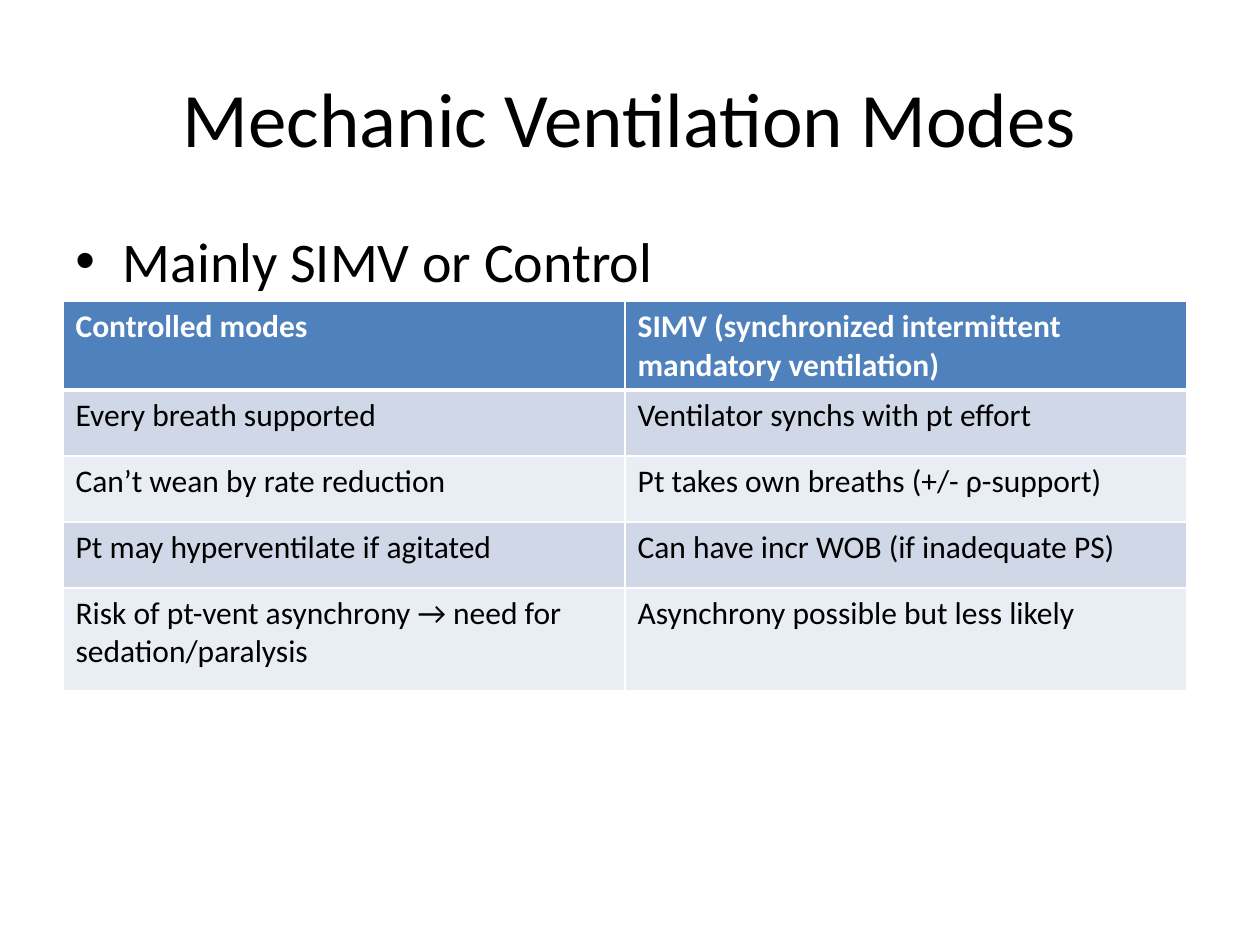
from lxml import etree
from pptx import Presentation
from pptx.dml.color import RGBColor
from pptx.enum import text
from pptx.oxml import ns
from pptx.util import Cm, Pt

TITLE = "Mechanic Ventilation Modes"
BULLET = "Mainly SIMV or Control"
MODES = [
    ("Controlled modes", "SIMV (synchronized intermittent mandatory ventilation)"),
    ("Every breath supported", "Ventilator synchs with pt effort"),
    ("Can’t wean by rate reduction", "Pt takes own breaths (+/- ρ-support)"),
    ("Pt may hyperventilate if agitated", "Can have incr WOB (if inadequate PS)"),
    ("Risk of pt-vent asynchrony → need for sedation/paralysis",
     "Asynchrony possible but less likely"),
]

FONT = "Calibri"
BLACK = RGBColor(0x00, 0x00, 0x00)
WHITE = RGBColor(0xFF, 0xFF, 0xFF)
HEADER_BLUE = RGBColor(0x4F, 0x81, 0xBD)
BANDS = [RGBColor(0xE9, 0xED, 0xF4), RGBColor(0xD0, 0xD8, 0xE8)]

LEFT = Cm(1.27)
TEXT_WIDTH = Cm(22.86)
COLUMN_WIDTH = Cm(11.33)
ROW_HEIGHT, LAST_ROW_HEIGHT = Cm(1.33), Cm(2.08)
BULLET_INDENT = Cm(0.95)


def add_run(paragraph, words, size, color=BLACK, bold=False):
    run = paragraph.add_run()
    run.text = words
    run.font.name = FONT
    run.font.size = Pt(size)
    run.font.bold = bold
    run.font.color.rgb = color


def add_text_box(slide, top, height, anchor):
    frame = slide.shapes.add_textbox(LEFT, top, TEXT_WIDTH, height).text_frame
    frame.word_wrap = True
    frame.vertical_anchor = anchor
    return frame.paragraphs[0]


def add_bullet(paragraph):
    properties = paragraph._p.get_or_add_pPr()
    properties.set("marL", str(BULLET_INDENT))
    properties.set("indent", str(-BULLET_INDENT))
    etree.SubElement(properties, ns.qn("a:buFont"), typeface="Arial")
    etree.SubElement(properties, ns.qn("a:buChar"), char="•")


def set_borders(cell, bottom_width):
    properties = cell._tc.get_or_add_tcPr()
    widths = {"a:lnL": 1, "a:lnR": 1, "a:lnT": 1, "a:lnB": bottom_width}
    for position, (tag, width) in enumerate(widths.items()):
        line = etree.Element(ns.qn(tag), w=str(Pt(width)))
        fill = etree.SubElement(line, ns.qn("a:solidFill"))
        etree.SubElement(fill, ns.qn("a:srgbClr"), val=str(WHITE))
        properties.insert(position, line)


def add_modes_table(slide):
    heights = [ROW_HEIGHT] * (len(MODES) - 1) + [LAST_ROW_HEIGHT]
    table = slide.shapes.add_table(
        len(MODES), 2, LEFT, Cm(6.08), 2 * COLUMN_WIDTH, sum(heights)
    ).table
    for column in table.columns:
        column.width = COLUMN_WIDTH
    for row_index, (words, height) in enumerate(zip(MODES, heights)):
        table.rows[row_index].height = height
        header = row_index == 0
        for column_index, cell_words in enumerate(words):
            cell = table.cell(row_index, column_index)
            cell.fill.solid()
            cell.fill.fore_color.rgb = HEADER_BLUE if header else BANDS[row_index % 2]
            set_borders(cell, 3 if header else 1)
            add_run(cell.text_frame.paragraphs[0], cell_words, 18,
                    WHITE if header else BLACK, header)


def main():
    presentation = Presentation()
    presentation.slide_width = Cm(25.4)
    presentation.slide_height = Cm(19.05)
    slide = presentation.slides.add_slide(presentation.slide_layouts[6])

    title = add_text_box(slide, Cm(0.76), Cm(3.18), text.MSO_ANCHOR.MIDDLE)
    title.alignment = text.PP_ALIGN.CENTER
    add_run(title, TITLE, 44)

    body = add_text_box(slide, Cm(4.45), Cm(11.43), text.MSO_ANCHOR.TOP)
    add_bullet(body)
    add_run(body, BULLET, 32)

    add_modes_table(slide)
    presentation.save("out.pptx")


if __name__ == "__main__":
    main()
